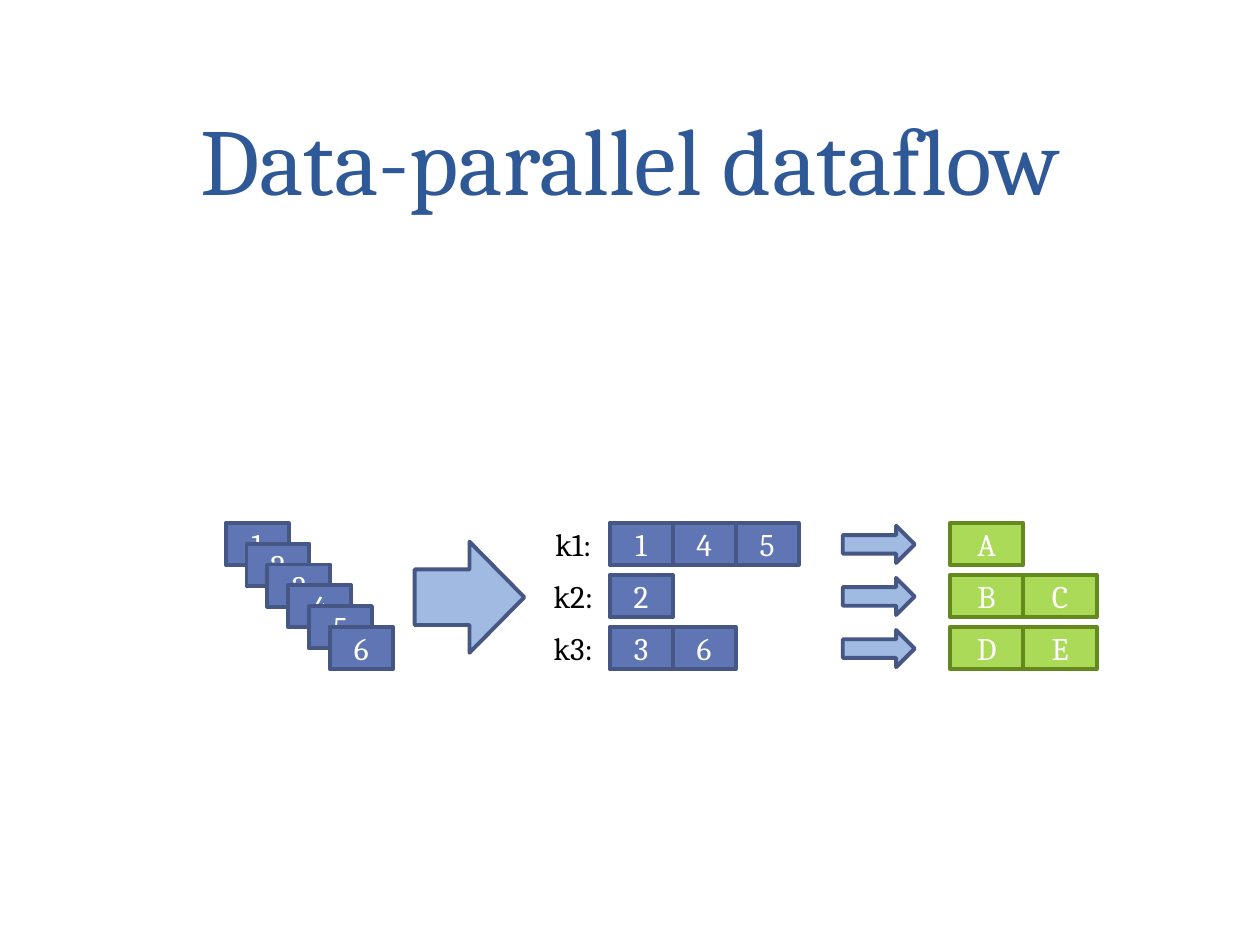
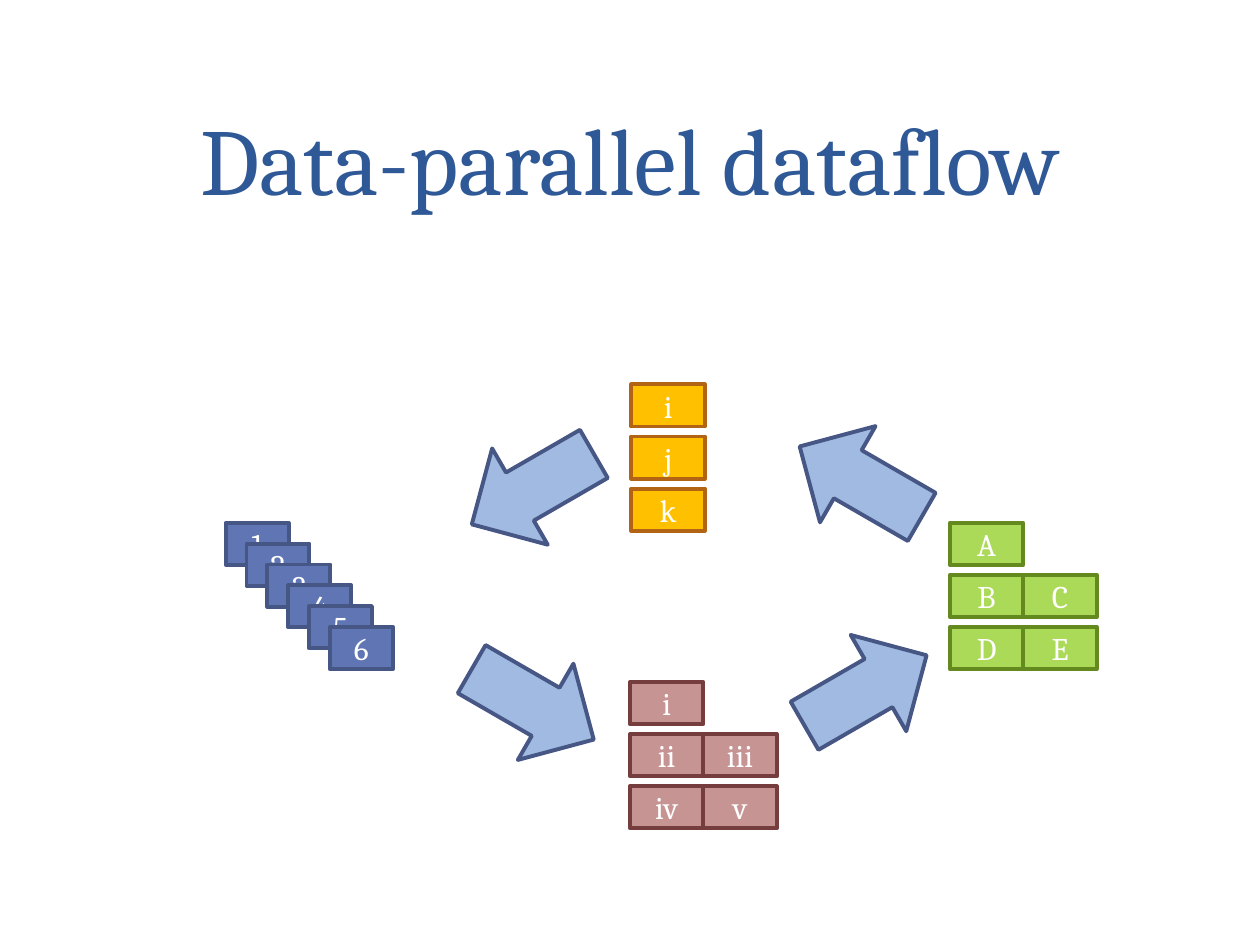
from pptx import Presentation
from pptx import util as u
from pptx.dml import color
from pptx.enum import shapes, text

FONT = "Cambria"
TITLE = "Data-parallel dataflow"
COLOURS = {"title": "2F5897", "label": "000000", "on_fill": "FFFFFF"}
FILLS = {"arrow": "A0BAE1", "input": "6076B4", "green": "ABD958",
         "rose": "C79494", "amber": "FFC000"}
LINES = {"arrow": "475785", "input": "475785", "green": "63891F",
         "rose": "753D3D", "amber": "B26314"}

CELL_HEIGHT = 0.85
ROW_STEP = 1.05
INPUT_WIDTH = 1.27
RESULT_WIDTH = 1.48
STACK_STEP = 0.42
FLOW_TOP = 10.54
RESULT_LEFT = 19.15


def add_item(page, words, left, top, width, height, *, style=None,
             kind=shapes.MSO_SHAPE.RECTANGLE, rotation=0, size=18,
             colour="on_fill", anchor=text.MSO_ANCHOR.MIDDLE, spacing=None):
    """Add a filled shape, or a plain text box when style is None (lengths in cm)."""
    place = [u.Cm(length) for length in (left, top, width, height)]
    if style:
        box = page.shapes.add_shape(kind, *place)
        box.shadow.inherit = False
        box.rotation = rotation
        box.fill.solid()
        box.fill.fore_color.rgb = color.RGBColor.from_string(FILLS[style])
        box.line.color.rgb = color.RGBColor.from_string(LINES[style])
        box.line.width = u.Pt(2.25)
    else:
        box = page.shapes.add_textbox(*place)
    if not words:
        return
    frame = box.text_frame
    frame.word_wrap = True
    frame.vertical_anchor = anchor
    frame.margin_left = frame.margin_right = 0
    frame.margin_top = frame.margin_bottom = u.Cm(0.13 if size > 18 else 0)
    para = frame.paragraphs[0]
    para.alignment = text.PP_ALIGN.CENTER
    if spacing:
        para.line_spacing = u.Pt(spacing)
    span = para.add_run()
    span.text = words
    span.font.name = FONT
    span.font.size = u.Pt(size)
    span.font.color.rgb = color.RGBColor.from_string(COLOURS[colour])


def add_rows(page, rows, left, top, width, style):
    """Draw each row as touching cells, with rows at equal steps down."""
    for row, cells in enumerate(rows):
        for column, words in enumerate(cells):
            add_item(page, words, left + column * width, top + row * ROW_STEP,
                     width, CELL_HEIGHT, style=style)


deck = Presentation()
deck.slide_width = u.Cm(25.4)
deck.slide_height = u.Cm(19.05)

# Both slides: title, stacked inputs and grouped results
pages = []
for _ in range(2):
    page = deck.slides.add_slide(deck.slide_layouts[6])
    add_item(page, TITLE, 1.27, 0, 22.86, 4.45, size=54, colour="title",
             anchor=text.MSO_ANCHOR.BOTTOM, spacing=58)
    for step, words in enumerate("123456"):
        add_item(page, words, 4.55 + step * STACK_STEP, FLOW_TOP + step * STACK_STEP,
                 INPUT_WIDTH, CELL_HEIGHT, style="input")
    add_rows(page, ["A", "BC", "DE"], RESULT_LEFT, FLOW_TOP, RESULT_WIDTH, "green")
    pages.append(page)
grouping_page, cycle_page = pages

# Inputs grouped by key, each key leading to its results
right_arrow = shapes.MSO_SHAPE.RIGHT_ARROW
add_item(grouping_page, "", 8.36, 10.92, 2.21, 2.24, style="arrow", kind=right_arrow)
add_rows(grouping_page, ["145", "2", "36"], 12.29, FLOW_TOP, INPUT_WIDTH, "input")
for row, key in enumerate(["k1:", "k2:", "k3:"]):
    row_top = FLOW_TOP + row * ROW_STEP
    add_item(grouping_page, key, 10.82, row_top, RESULT_WIDTH, CELL_HEIGHT,
             colour="label")
    add_item(grouping_page, "", 16.99, row_top + 0.06, 1.45, 0.75,
             style="arrow", kind=right_arrow)

# Dataflow as a cycle of four stages
add_rows(cycle_page, ["i", ["ii", "iii"], ["iv", "v"]], 12.7, 13.75,
         RESULT_WIDTH, "rose")
add_rows(cycle_page, "ijk", 12.73, 7.75, RESULT_WIDTH, "amber")
for left, top, rotation in [(9.32, 8.74, 150), (9.32, 13.08, 30),
                            (16.03, 12.8, 330), (15.93, 8.59, 210)]:
    add_item(cycle_page, "", left, top, 2.84, 2.24, style="arrow",
             kind=right_arrow, rotation=rotation)

deck.save("out.pptx")
